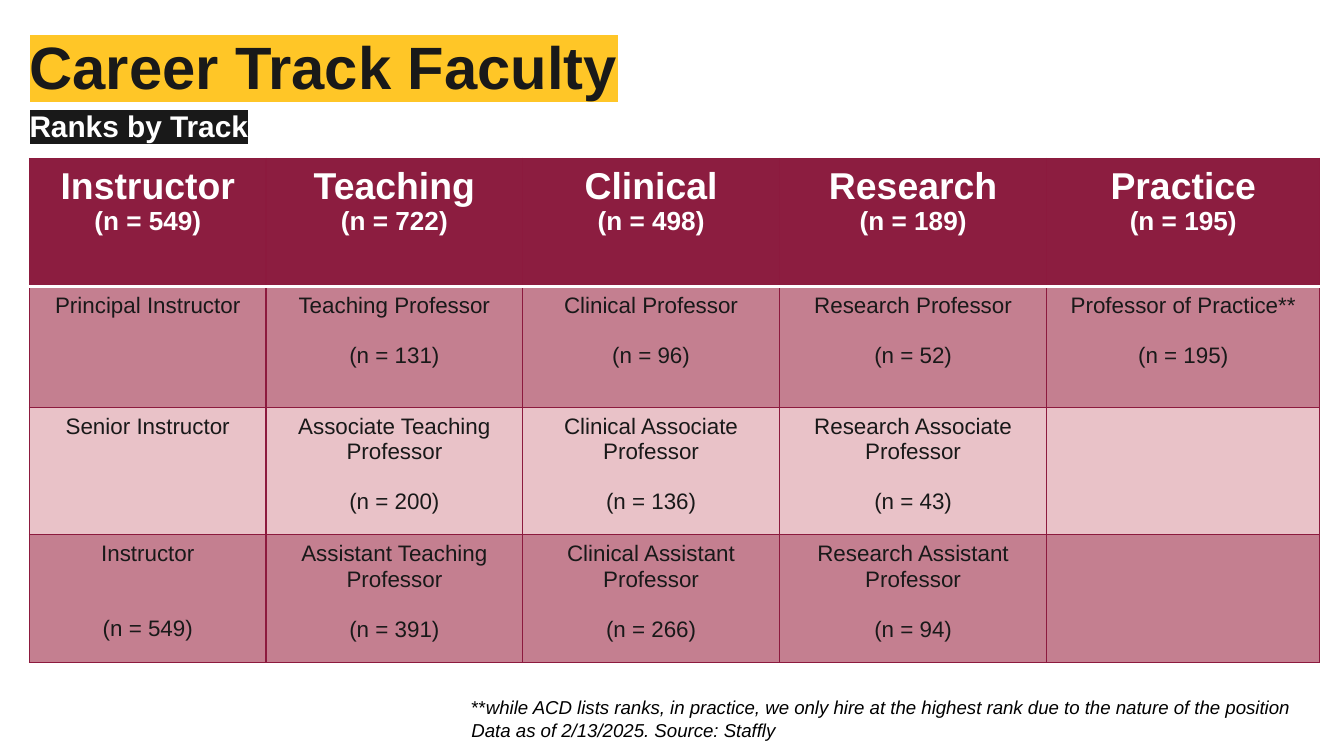
from lxml.etree import SubElement as Sub
from pptx import Presentation
from pptx.dml.color import RGBColor as RGB
from pptx.enum.text import PP_ALIGN as Align
from pptx.oxml import parse_xml
from pptx.oxml.ns import nsdecls, qn
from pptx.util import Inches, Pt

MAROON, EDGE, DARK, WHITE, BLACK = "8C1D40", "8C1A3E", "191919", "FFFFFF", "000000"
ROSE, PINK = "C47F90", "E9C2C8"


def tint(fmt, hue):
    fmt.rgb = RGB.from_string(hue)


def add(par, text, size, hue, bold=False, italic=False):
    run = par.add_run()
    run.text = text
    font = run.font
    font.name, font.size = "Arial", Pt(size)
    font.bold, font.italic = bold, italic
    tint(font.color, hue)
    return run


# Widescreen, 16 to 9
deck = Presentation()
deck.slide_width, deck.slide_height = Inches(10), Inches(10 * 9 / 16)
slide = deck.slides.add_slide(deck.slide_layouts[6])

# Title and subtitle, each on a highlight
heads = [
    ("Career Track Faculty", 0.28, 0.6, 32, DARK, "FFC627"),
    ("Ranks by Track", 0.83, 0.35, 16, WHITE, DARK),
]
for text, top, high, size, hue, mark in heads:
    box = slide.shapes.add_textbox(Inches(0.22), Inches(top), Inches(9.16), Inches(high))
    frame = box.text_frame
    frame.word_wrap = True
    frame.margin_left = frame.margin_right = frame.margin_top = frame.margin_bottom = 0
    par = frame.paragraphs[0]
    par.line_spacing, par.space_after = 0.9, Pt(8)
    run = add(par, text, size, hue, bold=True)
    glow = parse_xml(f'<a:highlight {nsdecls("a")}><a:srgbClr val="{mark}"/></a:highlight>')
    run.font._element.find(qn("a:solidFill")).addnext(glow)

# Table of ranks: name and count in each cell
rows = [
    [("Instructor", 549), ("Teaching", 722), ("Clinical", 498),
     ("Research", 189), ("Practice", 195)],
    [("Principal Instructor", None), ("Teaching Professor", 131),
     ("Clinical Professor", 96), ("Research Professor", 52),
     ("Professor of Practice**", 195)],
    [("Senior Instructor", None), ("Associate Teaching Professor", 200),
     ("Clinical Associate Professor", 136), ("Research Associate Professor", 43),
     ("", None)],
    [("Instructor", 549), ("Assistant Teaching Professor", 391),
     ("Clinical Assistant Professor", 266), ("Research Assistant Professor", 94),
     ("", None)],
]
wides = [1.76, 1.91, 1.91, 1.99, 2.03]
highs = [0.95, 0.9, 0.95, 0.95]
fills = [MAROON, ROSE, PINK, ROSE]
table = slide.shapes.add_table(
    len(rows), len(wides), Inches(0.22), Inches(1.18),
    Inches(sum(wides)), Inches(sum(highs))).table
table.first_row = table.horz_banding = False
for col, wide in zip(table.columns, wides):
    col.width = Inches(wide)

for r, row in enumerate(rows):
    table.rows[r].height = Inches(highs[r])
    head = r == 0
    hue = WHITE if head else DARK
    for c, (name, count) in enumerate(row):
        cell = table.cell(r, c)
        frame = cell.text_frame
        par = frame.paragraphs[0]
        par.alignment = Align.CENTER
        if name:
            add(par, name, 20 if head else 12, hue, bold=head)
        if count:
            par = frame.add_paragraph()
            par.alignment = Align.CENTER
            if not head:
                # The single-line Instructor cell aligns with its wrapped neighbours
                par.space_before = Pt(26.5 if name == "Instructor" else 13.5)
            add(par, f"(n = {count})", 14 if head else 12, hue, bold=head)

        # Borders, with a white rule below the header
        props = cell._tc.get_or_add_tcPr()
        for side in "LRTB":
            rule = (r, side) in [(0, "B"), (1, "T")]
            line = Sub(props, qn(f"a:ln{side}"), w=str(Pt(2 if rule else 0.75)))
            ink = Sub(line, qn("a:solidFill"))
            Sub(ink, qn("a:srgbClr"), val=WHITE if rule else EDGE)
        cell.fill.solid()
        tint(cell.fill.fore_color, fills[r])

# Footnote
note = slide.shapes.add_textbox(Inches(3.41), Inches(5.13), Inches(6.34), Inches(0.44))
frame = note.text_frame
frame.word_wrap = False
par = frame.paragraphs[0]
add(par, "**", 10, BLACK)
add(par, "while ACD lists ranks, in practice, we only hire at the highest rank "
    "due to the nature of the position", 10, BLACK, italic=True)
add(frame.add_paragraph(), "Data as of 2/13/2025. Source: Staffly", 10, BLACK, italic=True)

deck.save("out.pptx")
